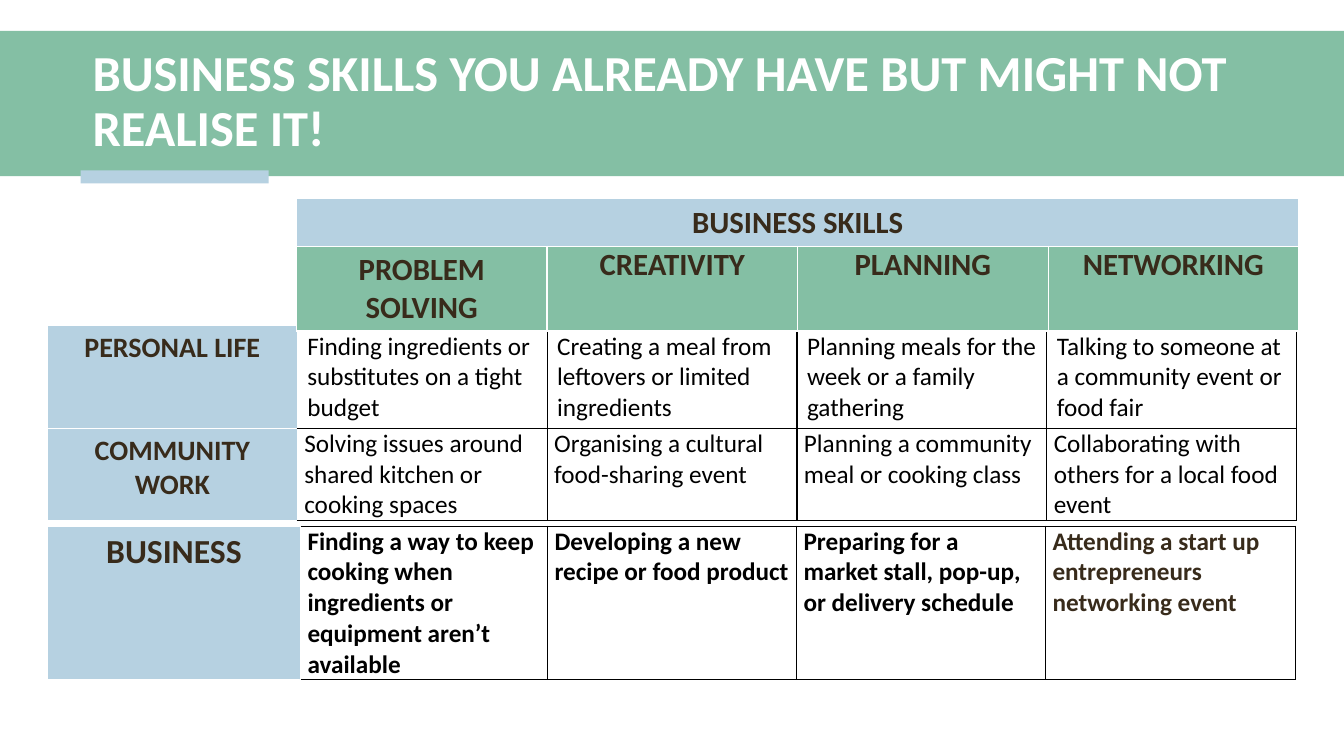
from dataclasses import dataclass

from lxml import etree
from pptx import Presentation
from pptx.dml.color import RGBColor
from pptx.enum.shapes import MSO_SHAPE
from pptx.enum.text import MSO_ANCHOR, PP_ALIGN
from pptx.oxml.ns import qn
from pptx.util import Inches, Pt

RECTANGLE = MSO_SHAPE.RECTANGLE
TOP, MIDDLE = MSO_ANCHOR.TOP, MSO_ANCHOR.MIDDLE
LEFT, CENTER = PP_ALIGN.LEFT, PP_ALIGN.CENTER
WIDE, TIGHT = (0.1, 0.05), (0.07, 0)  # side and top margins of a cell


@dataclass(frozen=True)
class Theme:
    font: str = "Calibri"
    green: str = "84BFA4"
    blue: str = "B6D1E1"
    brown: str = "382B1B"
    white: str = "FFFFFF"
    black: str = "000000"
    title: int = 36
    business: int = 24
    skill: int = 22
    area: int = 20
    example: int = 18


THEME = Theme()


@dataclass(frozen=True)
class Box:
    left: float
    top: float
    width: float
    height: float

    def inner(self, x, y, width, height):
        """Return the box at these shares of this one."""
        return Box(self.left + x * self.width, self.top + y * self.height,
                   width * self.width, height * self.height)

    def emu(self):
        return [Inches(v) for v in (self.left, self.top, self.width, self.height)]


@dataclass(frozen=True)
class CellStyle:
    size: int
    color: str
    bold: bool = True
    fill: str = ""
    align: PP_ALIGN = CENTER
    anchor: MSO_ANCHOR = TOP
    margins: tuple = WIDE
    left_edge: str = THEME.white
    edges: str = THEME.white


SLIDE = Box(0, 0, 13.33, 7.5)

SKILLS = ["PROBLEM SOLVING", "CREATIVITY", "PLANNING", "NETWORKING"]
PERSONAL = ["Finding ingredients or substitutes on a tight budget",
            "Creating a meal from leftovers or limited ingredients",
            "Planning meals for the week or a family gathering",
            "Talking to someone at a community event or food fair"]
COMMUNITY = ["Solving issues around shared kitchen or cooking spaces",
             "Organising a cultural food-sharing event",
             "Planning a community meal or cooking class",
             "Collaborating with others for a local food event"]
BUSINESS = ["Finding a way to keep cooking when ingredients or equipment aren’t available",
            "Developing a new recipe or food product",
            "Preparing for a market stall, pop-up, or delivery schedule",
            "Attending a start up entrepreneurs networking event"]


def add_run(paragraph, text, size, color, bold):
    run = paragraph.add_run()
    run.text = text
    run.font.name, run.font.size, run.font.bold = THEME.font, Pt(size), bold
    run.font.color.rgb = RGBColor.from_string(color)


def add_bar(slide, box, color):
    bar = slide.shapes.add_shape(RECTANGLE, *box.emu())
    bar.shadow.inherit = False
    bar.fill.solid()
    bar.fill.fore_color.rgb = RGBColor.from_string(color)
    bar.line.fill.background()


def add_title_band(slide, box):
    add_bar(slide, box, THEME.green)
    add_bar(slide, box.inner(0.06, 0.96, 0.14, 0.09), THEME.blue)
    title = slide.shapes.add_textbox(*box.inner(0.0615, 0.07, 0.9, 0.85).emu())
    frame = title.text_frame
    frame.word_wrap, frame.vertical_anchor = True, MIDDLE
    frame.paragraphs[0].line_spacing = 0.9
    add_run(frame.paragraphs[0], "BUSINESS SKILLS YOU ALREADY HAVE BUT MIGHT NOT REALISE IT!",
            THEME.title, THEME.white, True)


def add_edges(cell, style):
    properties = cell._tc.get_or_add_tcPr()
    for side in ("lnL", "lnR", "lnT", "lnB"):
        color = style.left_edge if side == "lnL" else style.edges
        edge = etree.SubElement(properties, qn(f"a:{side}"), w=str(Pt(1)))
        fill = etree.SubElement(edge, qn("a:solidFill"))
        etree.SubElement(fill, qn("a:srgbClr"), val=color)


def fill_cell(cell, text, style):
    add_edges(cell, style)
    if style.fill:
        cell.fill.solid()
        cell.fill.fore_color.rgb = RGBColor.from_string(style.fill)
    else:
        cell.fill.background()
    side, end = style.margins
    cell.margin_left = cell.margin_right = Inches(side)
    cell.margin_top = cell.margin_bottom = Inches(end)
    cell.vertical_anchor = style.anchor
    paragraph = cell.text_frame.paragraphs[0]
    paragraph.alignment = style.align
    if text:
        add_run(paragraph, text, style.size, style.color, style.bold)


def add_grid(slide, box, columns, rows, content):
    """Fill a table whose columns and rows are shares of the box."""
    table = slide.shapes.add_table(len(rows), len(columns), *box.emu()).table
    table.first_row = table.horz_banding = False
    for column, share in zip(table.columns, columns):
        column.width = Inches(box.width * share / sum(columns))
    for row, share in zip(table.rows, rows):
        row.height = Inches(box.height * share / sum(rows))
    for r, entries in enumerate(content):
        for c, (text, style) in enumerate(entries):
            fill_cell(table.cell(r, c), text, style)
    return table


def area_style(size):
    return CellStyle(size, THEME.brown, fill=THEME.blue)


def example_style(first, bold=False, color=THEME.black, anchor=TOP, margins=TIGHT):
    return CellStyle(THEME.example, color, bold, align=LEFT, anchor=anchor, margins=margins,
                     left_edge=THEME.white if first else THEME.black, edges=THEME.black)


def add_daily_life(slide, box):
    personal = [(text, example_style(i == 0, anchor=MIDDLE, margins=WIDE))
                for i, text in enumerate(PERSONAL)]
    community = [(text, example_style(i == 0)) for i, text in enumerate(COMMUNITY)]
    label = area_style(THEME.area)
    add_grid(slide, box, [1] * 5, [1.02, 0.92],
             [[("PERSONAL LIFE", label)] + personal, [("COMMUNITY WORK", label)] + community])


def add_skill_header(slide, box):
    heading = CellStyle(THEME.skill, THEME.brown, fill=THEME.blue)
    skills = [(text, CellStyle(THEME.skill, THEME.brown, fill=THEME.green,
                               margins=TIGHT if i else WIDE))
              for i, text in enumerate(SKILLS)]
    table = add_grid(slide, box, [1] * 4, [0.47, 0.84],
                     [[("BUSINESS SKILLS", heading)] + [("", heading)] * 3, skills])
    table.cell(0, 0).merge(table.cell(0, 3))


def add_business(slide, box):
    last = len(BUSINESS) - 1
    examples = [(text, example_style(i == 0, True, THEME.brown if i == last else THEME.black))
                for i, text in enumerate(BUSINESS)]
    add_grid(slide, box, [2.51, 2.45, 2.47, 2.47, 2.48], [1],
             [[("BUSINESS", area_style(THEME.business))] + examples])


def main():
    deck = Presentation()
    deck.slide_width, deck.slide_height = Inches(SLIDE.width), Inches(SLIDE.height)
    slide = deck.slides.add_slide(deck.slide_layouts[6])
    add_title_band(slide, SLIDE.inner(0, 0.041, 1, 0.192))
    add_daily_life(slide, SLIDE.inner(0.0353, 0.431, 0.9295, 0.258))
    add_skill_header(slide, SLIDE.inner(0.2206, 0.263, 0.7457, 0.175))
    add_business(slide, SLIDE.inner(0.0353, 0.696, 0.9287, 0.203))
    deck.save("out.pptx")


if __name__ == "__main__":
    main()
